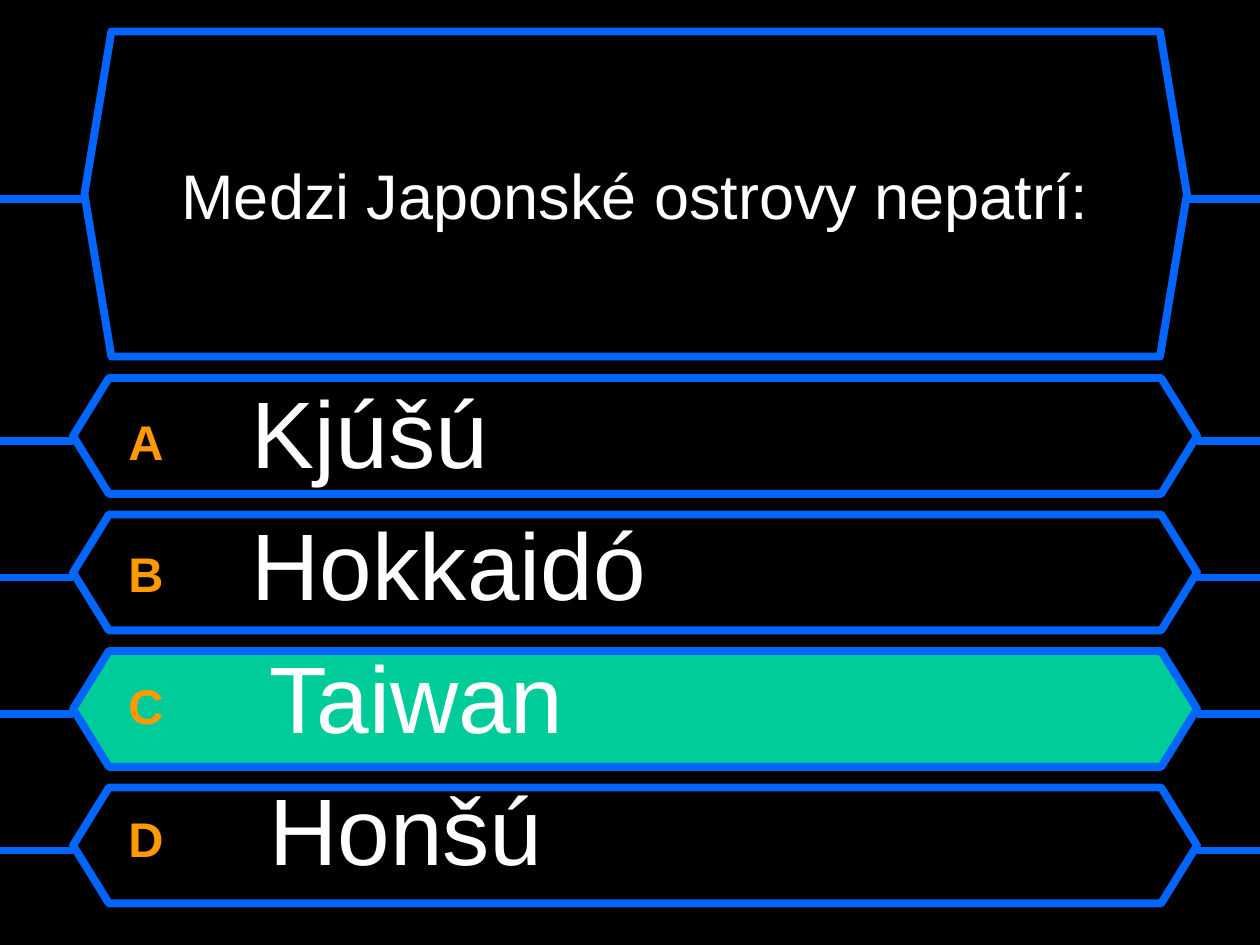
from dataclasses import dataclass

from lxml import etree
from pptx import Presentation
from pptx.dml.color import RGBColor
from pptx.enum.shapes import MSO_CONNECTOR, MSO_SHAPE
from pptx.enum.text import MSO_ANCHOR, MSO_AUTO_SIZE, PP_ALIGN
from pptx.oxml.ns import qn
from pptx.util import Inches, Pt

HEX = MSO_SHAPE.HEXAGON
STRAIGHT = MSO_CONNECTOR.STRAIGHT
MIDDLE = MSO_ANCHOR.MIDDLE
CENTER = PP_ALIGN.CENTER
FIXED = MSO_AUTO_SIZE.NONE

BLACK = RGBColor(0x00, 0x00, 0x00)
WHITE = RGBColor(0xFF, 0xFF, 0xFF)
BLUE = RGBColor(0x00, 0x66, 0xFF)
GREEN = RGBColor(0x00, 0xCC, 0x99)
ORANGE = RGBColor(0xFF, 0x99, 0x00)

WIDE = 10
TOP, STEP = 3, 13 / 12
ASKED = {"name": "Arial", "size": Pt(36), "bold": False}
LETTER = {"name": "Arial", "size": Pt(48), "bold": True}
REPLY = {"name": "Arial", "size": Pt(54), "bold": False}


@dataclass
class Panel:
    left: float
    top: float
    width: float
    height: float
    bend: float
    wire: float
    fill: RGBColor = BLACK


@dataclass
class Answer:
    letter: str
    text: str
    tab: float
    fill: RGBColor = BLACK


ANSWERS = [
    Answer("A", "Kjúšú", 0.98),
    Answer("B", "Hokkaidó", 0.98),
    Answer("C", "Taiwan", 1.12, GREEN),
    Answer("D", "Honšú", 1.12),
]


def style(font, look: dict, color: RGBColor) -> None:
    for key, value in look.items():
        setattr(font, key, value)
    font.color.rgb = color


def edge(line) -> None:
    line.color.rgb = BLUE
    line.width = Pt(4.5)


def draw_wire(shapes, start: float, end: float, y: float) -> None:
    wire = shapes.add_connector(
        STRAIGHT, Inches(start), Inches(y), Inches(end), Inches(y))
    edge(wire.line)
    etree.SubElement(wire._element.spPr, qn("a:effectLst"))


def draw_panel(shapes, panel: Panel) -> None:
    box = shapes.add_shape(HEX, Inches(panel.left), Inches(panel.top),
                           Inches(panel.width), Inches(panel.height))
    box.adjustments[0] = panel.bend
    box.shadow.inherit = False
    box.fill.solid()
    box.fill.fore_color.rgb = panel.fill
    edge(box.line)
    draw_wire(shapes, 0, panel.left, panel.wire)
    draw_wire(shapes, panel.left + panel.width, WIDE, panel.wire)


def write_answer(para, answer: Answer) -> None:
    # Space before as a share of the line, and a tab between letter and text
    props = para._p.get_or_add_pPr()
    space = etree.SubElement(props, qn("a:spcBef"))
    etree.SubElement(space, qn("a:spcPct"), val="20000")
    tabs = etree.SubElement(props, qn("a:tabLst"))
    etree.SubElement(tabs, qn("a:tab"), pos=str(Inches(answer.tab)), algn="l")

    mark = para.add_run()
    mark.text = answer.letter + "\t"
    style(mark.font, LETTER, ORANGE)
    mark._r.get_or_add_rPr().set("baseline", "10000")
    reply = para.add_run()
    reply.text = answer.text
    style(reply.font, REPLY, WHITE)


def main() -> None:
    deck = Presentation()
    deck.slide_width, deck.slide_height = Inches(WIDE), Inches(7.5)
    slide = deck.slides.add_slide(deck.slide_layouts[5])
    slide.background.fill.solid()
    slide.background.fill.fore_color.rgb = BLACK
    shapes = slide.shapes

    # Question and answer panels with their side wires
    draw_panel(shapes, Panel(0.67, 0.25, 8.75, 2.58, 0.083, 1.58))
    for row, answer in enumerate(ANSWERS):
        top = TOP + row * STEP
        draw_panel(shapes, Panel(0.58, top, 8.92, 0.92, 0.309,
                                 top + 0.5, answer.fill))

    # Question, raised above its panel
    title = shapes.title
    title.left, title.top = Inches(0.83), Inches(0.42)
    title.width, title.height = Inches(8.42), Inches(2.25)
    frame = title.text_frame
    frame.text = "Medzi Japonské ostrovy nepatrí:"
    frame.auto_size = FIXED
    frame.vertical_anchor = MIDDLE
    frame.paragraphs[0].alignment = CENTER
    style(frame.paragraphs[0].runs[0].font, ASKED, WHITE)
    shapes._spTree.append(title._element)

    # Answers
    body = shapes.add_textbox(
        Inches(0.92), Inches(2.92), Inches(8.33), Inches(4.33)).text_frame
    body.word_wrap = True
    for row, answer in enumerate(ANSWERS):
        para = body.add_paragraph() if row else body.paragraphs[0]
        write_answer(para, answer)

    deck.save("out.pptx")


if __name__ == "__main__":
    main()
